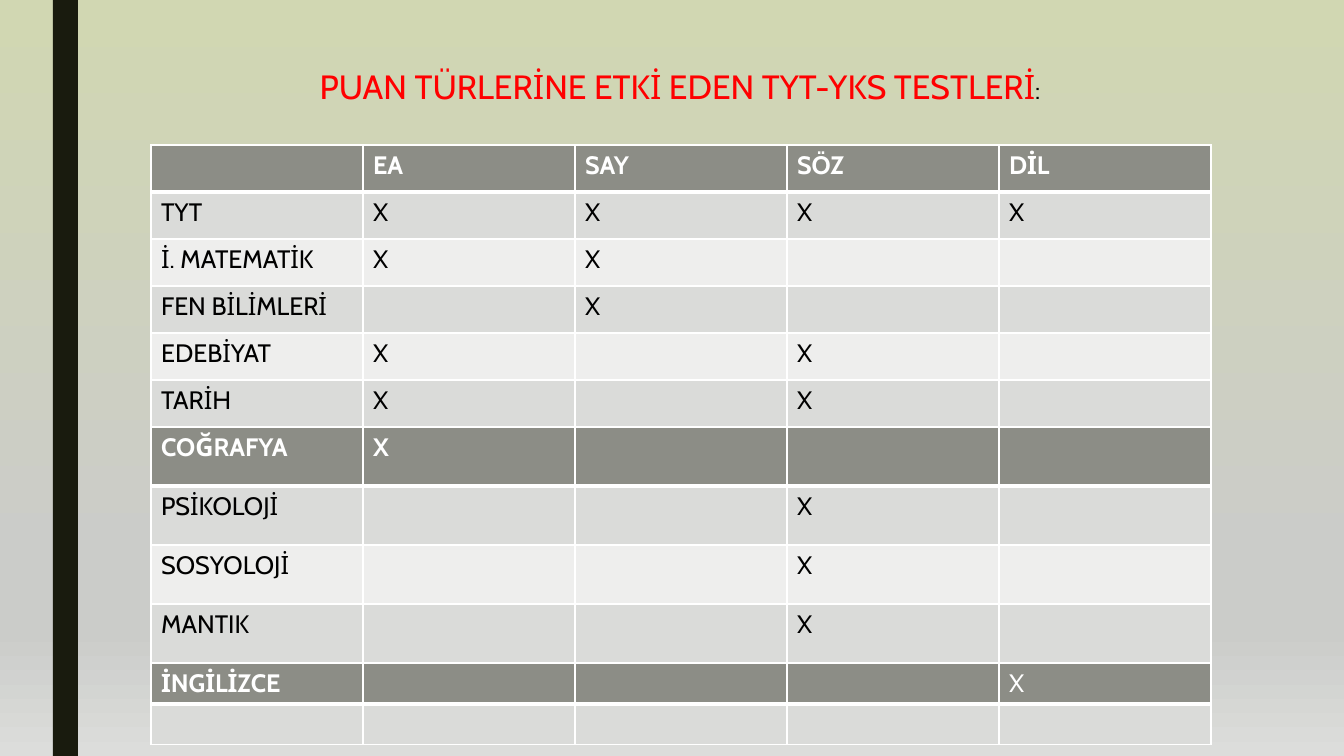
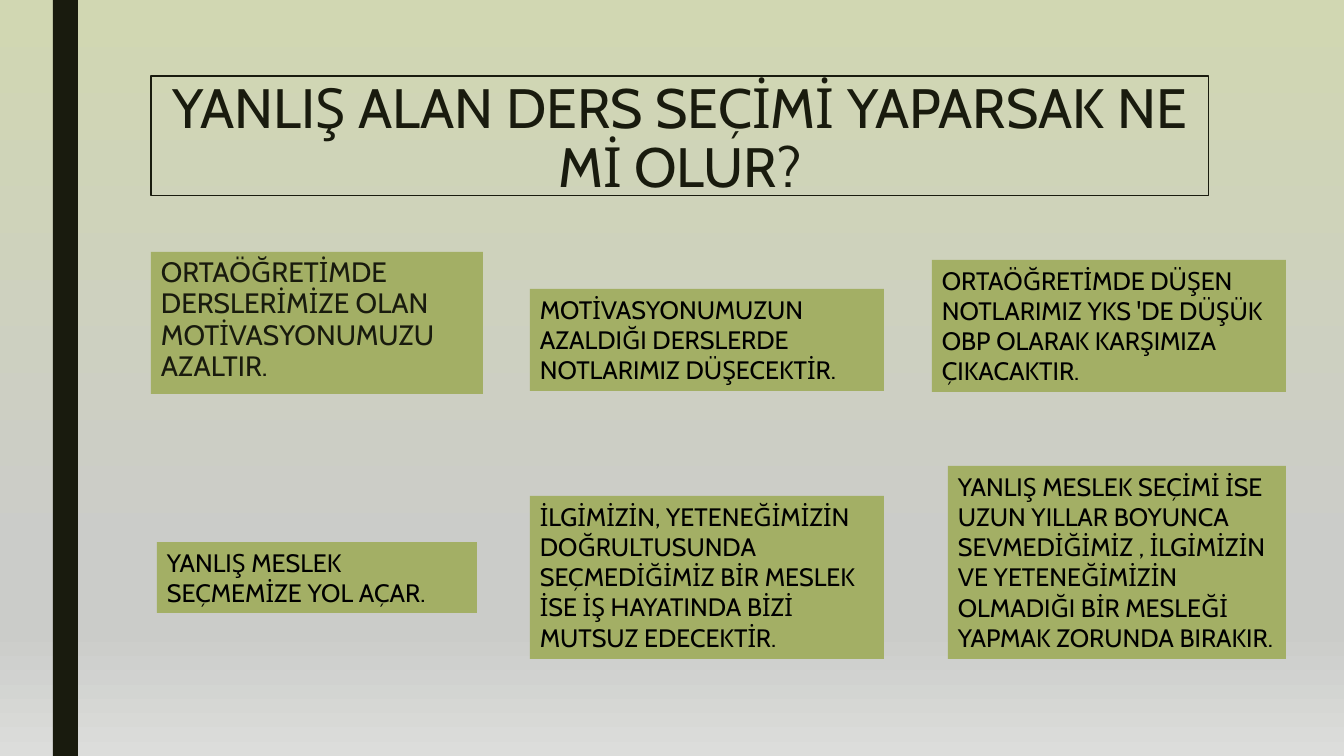
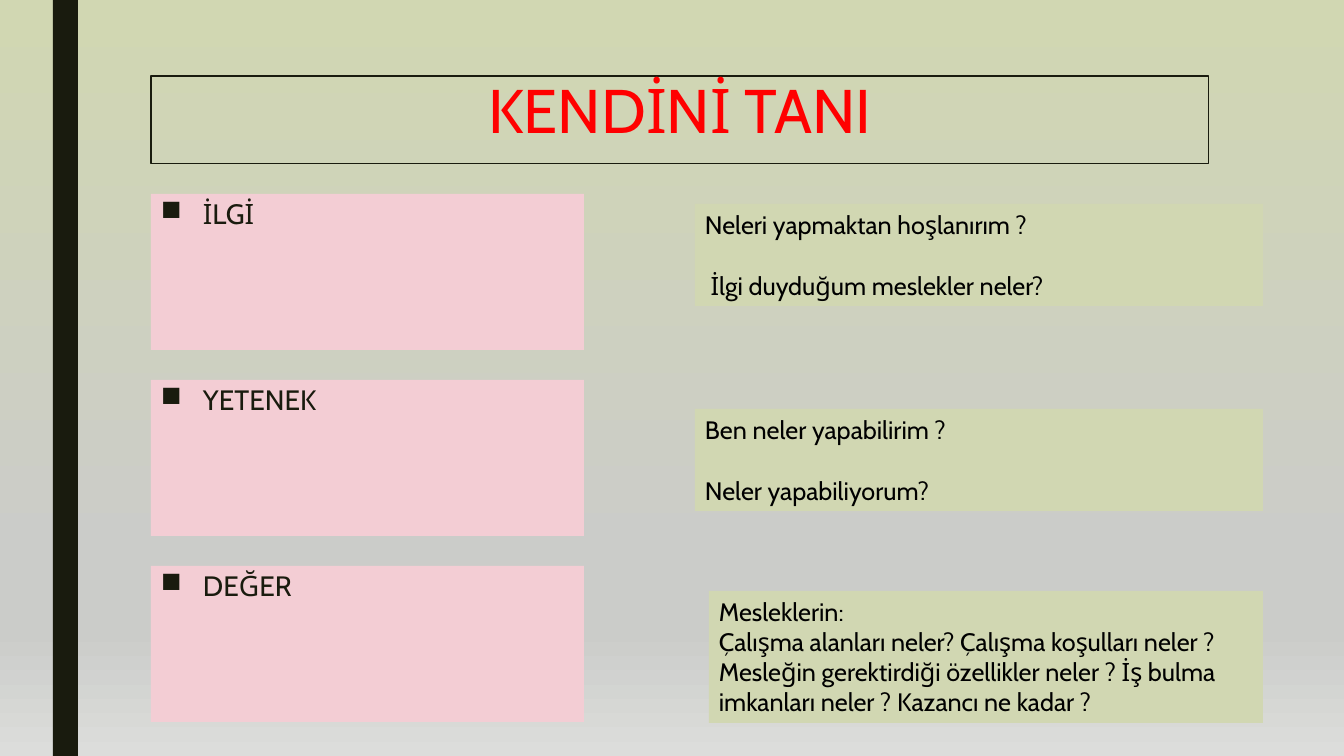
from dataclasses import dataclass
from typing import NamedTuple

from lxml.etree import SubElement
from pptx import Presentation
from pptx.dml.color import RGBColor as Rgb
from pptx.enum.shapes import MSO_SHAPE as Preset
from pptx.enum.text import MSO_ANCHOR as Anchor, MSO_AUTO_SIZE as AutoSize, PP_ALIGN as Align
from pptx.oxml.ns import qn
from pptx.util import Emu, Pt

EMU_PER_PX = 914400 / 100.8
SLIDE_W, SLIDE_H = 1344, 756


def px(length: int) -> Emu:
    return Emu(round(length * EMU_PER_PX))


@dataclass(frozen=True)
class Theme:
    font: str = "Cabin"
    ink: str = "191B0E"
    black: str = "000000"
    white: str = "FFFFFF"
    red: str = "FF0000"
    olive: str = "A3AF65"
    pale_green: str = "D1D7B2"
    pink: str = "F3CDD4"
    table_head: str = "8C8D86"
    table_bands: tuple[str, str] = ("DADBD9", "EEEEED")
    background: tuple[tuple[int, str], ...] = (
        (0, "D1D7B2"), (74, "CBCCC9"), (83, "CBCCC9"), (100, "DCDDDB"))
    text_size: float = 18
    lead_size: float = 20
    table_title_size: float = 24
    question_title_size: float = 39.6
    main_title_size: float = 44
    thin_border: float = 1
    thick_border: float = 3
    title_line: float = 0.75


THEME = Theme()


class Box(NamedTuple):
    left: int
    top: int
    width: int
    height: int

    def emu(self) -> tuple[Emu, ...]:
        return tuple(px(length) for length in self)


@dataclass(frozen=True)
class TextStyle:
    size: float = THEME.text_size
    color: str = THEME.black
    bold: bool = False
    align: Align = Align.LEFT
    line_spacing: float = 1.0
    before: float = 0
    after: float = 0
    bullet: str = ""


@dataclass(frozen=True)
class Panel:
    box: Box
    lines: tuple[str, ...]
    fill: str
    style: TextStyle = TextStyle()
    gap: float = 0


@dataclass(frozen=True)
class ScoreTable:
    """A table whose first row is a heading band; marks list the columns with an X."""
    row_height: int
    rows: tuple[tuple[str, ...], ...]
    bold_marks: bool = True


TITLE_LEFT, TITLE_WIDTH = 151, 1058
BODY = TextStyle()
LEAD = TextStyle(THEME.lead_size, THEME.ink, line_spacing=0.94, before=10, after=2)
TOPIC = TextStyle(THEME.lead_size, THEME.ink, line_spacing=0.94, before=10, after=2, bullet="■")
BULLET_INDENT = 42
BLANK_LINE = 22
COLUMN_WIDTH, COLUMN_COUNT = 212, 5
TABLE_TOP = 145

SCORE_TABLES = (
    ScoreTable(47, (
        ("", "EA", "SAY", "SÖZ", "DİL"),
        ("TYT", "X", "X", "X", "X"),
        ("İ. MATEMATİK", "X", "X", "", ""),
        ("FEN BİLİMLERİ", "", "X", "", ""),
        ("EDEBİYAT", "X", "", "X", ""),
        ("TARİH", "X", "", "X", ""),
    )),
    ScoreTable(59, (
        ("COĞRAFYA", "X", "", "", ""),
        ("PSİKOLOJİ", "", "", "X", ""),
        ("SOSYOLOJİ", "", "", "X", ""),
        ("MANTIK", "", "", "X", ""),
    )),
    ScoreTable(40, (
        ("İNGİLİZCE", "", "", "", "X"),
        ("", "", "", "", ""),
    ), bold_marks=False),
)

CONSEQUENCES = (
    Panel(Box(151, 252, 332, 142),
          ("ORTAÖĞRETİMDE DERSLERİMİZE OLAN MOTİVASYONUMUZU AZALTIR.",), THEME.olive, LEAD),
    Panel(Box(530, 289, 354, 102),
          ("MOTİVASYONUMUZUN AZALDIĞI DERSLERDE NOTLARIMIZ DÜŞECEKTİR.",), THEME.olive),
    Panel(Box(932, 260, 354, 132),
          ("ORTAÖĞRETİMDE DÜŞEN NOTLARIMIZ YKS 'DE DÜŞÜK OBP OLARAK KARŞIMIZA ÇIKACAKTIR.",),
          THEME.olive),
    Panel(Box(157, 542, 320, 71), ("YANLIŞ MESLEK SEÇMEMİZE YOL AÇAR.",), THEME.olive),
    Panel(Box(530, 496, 354, 163),
          ("İLGİMİZİN, YETENEĞİMİZİN DOĞRULTUSUNDA SEÇMEDİĞİMİZ BİR MESLEK İSE İŞ HAYATINDA "
           "BİZİ MUTSUZ EDECEKTİR.",), THEME.olive),
    Panel(Box(948, 466, 338, 193),
          ("YANLIŞ MESLEK SEÇİMİ İSE UZUN YILLAR BOYUNCA SEVMEDİĞİMİZ , İLGİMİZİN VE "
           "YETENEĞİMİZİN OLMADIĞI BİR MESLEĞİ YAPMAK ZORUNDA BIRAKIR.",), THEME.olive),
)

TOPICS = tuple(
    Panel(Box(151, 194 + 186 * index, 433, 156), (topic,), THEME.pink, TOPIC)
    for index, topic in enumerate(("İLGİ", "YETENEK", "DEĞER")))

QUESTIONS = (
    Panel(Box(695, 204, 568, 102),
          ("Neleri yapmaktan hoşlanırım ?", " İlgi duyduğum meslekler neler?"),
          THEME.pale_green, gap=BLANK_LINE),
    Panel(Box(695, 409, 568, 102), ("Ben neler yapabilirim ?", "Neler yapabiliyorum?"),
          THEME.pale_green, gap=BLANK_LINE),
    Panel(Box(709, 591, 554, 132),
          ("Mesleklerin:",
           "Çalışma alanları neler? Çalışma koşulları neler ? Mesleğin gerektirdiği özellikler "
           "neler ? İş bulma imkanları neler ? Kazancı ne kadar ?"), THEME.pale_green),
)


def set_fill(target, color: str) -> None:
    target.fill.solid()
    target.fill.fore_color.rgb = Rgb.from_string(color)


def set_font(font, style: TextStyle) -> None:
    font.name, font.size, font.bold = THEME.font, Pt(style.size), style.bold
    font.color.rgb = Rgb.from_string(style.color)


def format_paragraph(paragraph, style: TextStyle) -> None:
    if style.bullet:
        properties = paragraph._p.get_or_add_pPr()
        properties.set("marL", str(px(BULLET_INDENT)))
        properties.set("indent", str(-px(BULLET_INDENT)))
        SubElement(properties, qn("a:buChar")).set("char", style.bullet)
    paragraph.alignment = style.align
    paragraph.line_spacing = style.line_spacing
    paragraph.space_before, paragraph.space_after = Pt(style.before), Pt(style.after)
    set_font(paragraph.font, style)


def prepare_frame(frame) -> None:
    frame.word_wrap = True
    frame.auto_size = AutoSize.NONE
    frame.vertical_anchor = Anchor.TOP


def set_background(master) -> None:
    fill = master.background.fill
    fill.gradient()
    fill.gradient_angle = 270
    stops = next(master.element.iter(qn("a:gsLst")))
    for stop in list(stops):
        stops.remove(stop)
    for position, color in THEME.background:
        stop = SubElement(stops, qn("a:gs"))
        stop.set("pos", str(position * 1000))
        SubElement(stop, qn("a:srgbClr")).set("val", color)


def add_side_bar(master, slide) -> None:
    """Draw the bar on a slide, then move it to the master, which all slides share."""
    bar = slide.shapes.add_shape(Preset.RECTANGLE, *Box(53, 0, 25, SLIDE_H).emu())
    bar.shadow.inherit = False
    set_fill(bar, THEME.ink)
    bar.line.fill.background()
    bar.element.nvSpPr.cNvPr.id = 20
    master.element.cSld.spTree.insert(2, bar.element)


def add_title(slide, text: str, top: int, height: int, style: TextStyle, framed: bool = True):
    title = slide.shapes.title
    title.left, title.top, title.width, title.height = Box(
        TITLE_LEFT, top, TITLE_WIDTH, height).emu()
    prepare_frame(title.text_frame)
    paragraph = title.text_frame.paragraphs[0]
    paragraph.text = text
    format_paragraph(paragraph, style)
    if framed:
        title.line.color.rgb = Rgb.from_string(THEME.ink)
        title.line.width = Pt(THEME.title_line)
    return paragraph


def add_panel(slide, panel: Panel) -> None:
    holder = slide.shapes.add_textbox(*panel.box.emu())
    set_fill(holder, panel.fill)
    frame = holder.text_frame
    prepare_frame(frame)
    for index, line in enumerate(panel.lines):
        paragraph = frame.add_paragraph() if index else frame.paragraphs[0]
        paragraph.text = line
        format_paragraph(paragraph, panel.style)
        if index and panel.gap:
            paragraph.space_before = Pt(panel.gap)


def set_borders(cell, top: float, bottom: float) -> None:
    properties = cell._tc.get_or_add_tcPr()
    sides = {"L": THEME.thin_border, "R": THEME.thin_border, "T": top, "B": bottom}
    for index, (side, width) in enumerate(sides.items()):
        border = properties.makeelement(qn(f"a:ln{side}"), {"w": str(Pt(width))})
        color = SubElement(SubElement(border, qn("a:solidFill")), qn("a:srgbClr"))
        color.set("val", THEME.white)
        properties.insert(index, border)


def add_score_table(slide, scores: ScoreTable, top: int) -> int:
    """Draw the table and return its bottom edge."""
    height = scores.row_height * len(scores.rows)
    box = Box(TITLE_LEFT, top, COLUMN_WIDTH * COLUMN_COUNT, height)
    table = slide.shapes.add_table(len(scores.rows), COLUMN_COUNT, *box.emu()).table
    table.horz_banding = False
    for row_index, row in enumerate(scores.rows):
        table.rows[row_index].height = px(scores.row_height)
        heading = row_index == 0
        fill = THEME.table_head if heading else THEME.table_bands[(row_index - 1) % 2]
        for column_index, text in enumerate(row):
            cell = table.cell(row_index, column_index)
            set_fill(cell, fill)
            set_borders(cell,
                        top=THEME.thick_border if row_index == 1 else THEME.thin_border,
                        bottom=THEME.thick_border if heading else THEME.thin_border)
            paragraph = cell.text_frame.paragraphs[0]
            paragraph.text = text
            bold = heading and (column_index == 0 or scores.bold_marks)
            color = THEME.white if heading else THEME.black
            format_paragraph(paragraph, TextStyle(color=color, bold=bold))
    return top + height


def build_score_slide(slide) -> None:
    heading = TextStyle(THEME.table_title_size, THEME.red, align=Align.CENTER)
    title = add_title(slide, "PUAN TÜRLERİNE ETKİ EDEN TYT-YKS TESTLERİ", 61, 50, heading,
                      framed=False)
    colon = title.add_run()
    colon.text = ":"
    set_font(colon.font, BODY)
    top = TABLE_TOP
    for scores in SCORE_TABLES:
        top = add_score_table(slide, scores, top)


def build_consequence_slide(slide) -> None:
    add_title(slide, "YANLIŞ ALAN DERS SEÇİMİ YAPARSAK NE Mİ OLUR?", 76, 120,
              TextStyle(THEME.question_title_size, THEME.ink, align=Align.CENTER,
                        line_spacing=0.89))
    for panel in CONSEQUENCES:
        add_panel(slide, panel)


def build_self_knowledge_slide(slide) -> None:
    add_title(slide, "KENDİNİ TANI", 76, 88,
              TextStyle(THEME.main_title_size, THEME.red, align=Align.CENTER,
                        line_spacing=0.89))
    for panel in TOPICS + QUESTIONS:
        add_panel(slide, panel)


def main() -> None:
    deck = Presentation()
    deck.slide_width, deck.slide_height = px(SLIDE_W), px(SLIDE_H)
    title_only = deck.slide_layouts.get_by_name("Title Only")
    set_background(deck.slide_master)
    for build in (build_score_slide, build_consequence_slide, build_self_knowledge_slide):
        build(deck.slides.add_slide(title_only))
    add_side_bar(deck.slide_master, deck.slides[0])
    deck.save("out.pptx")


if __name__ == "__main__":
    main()
